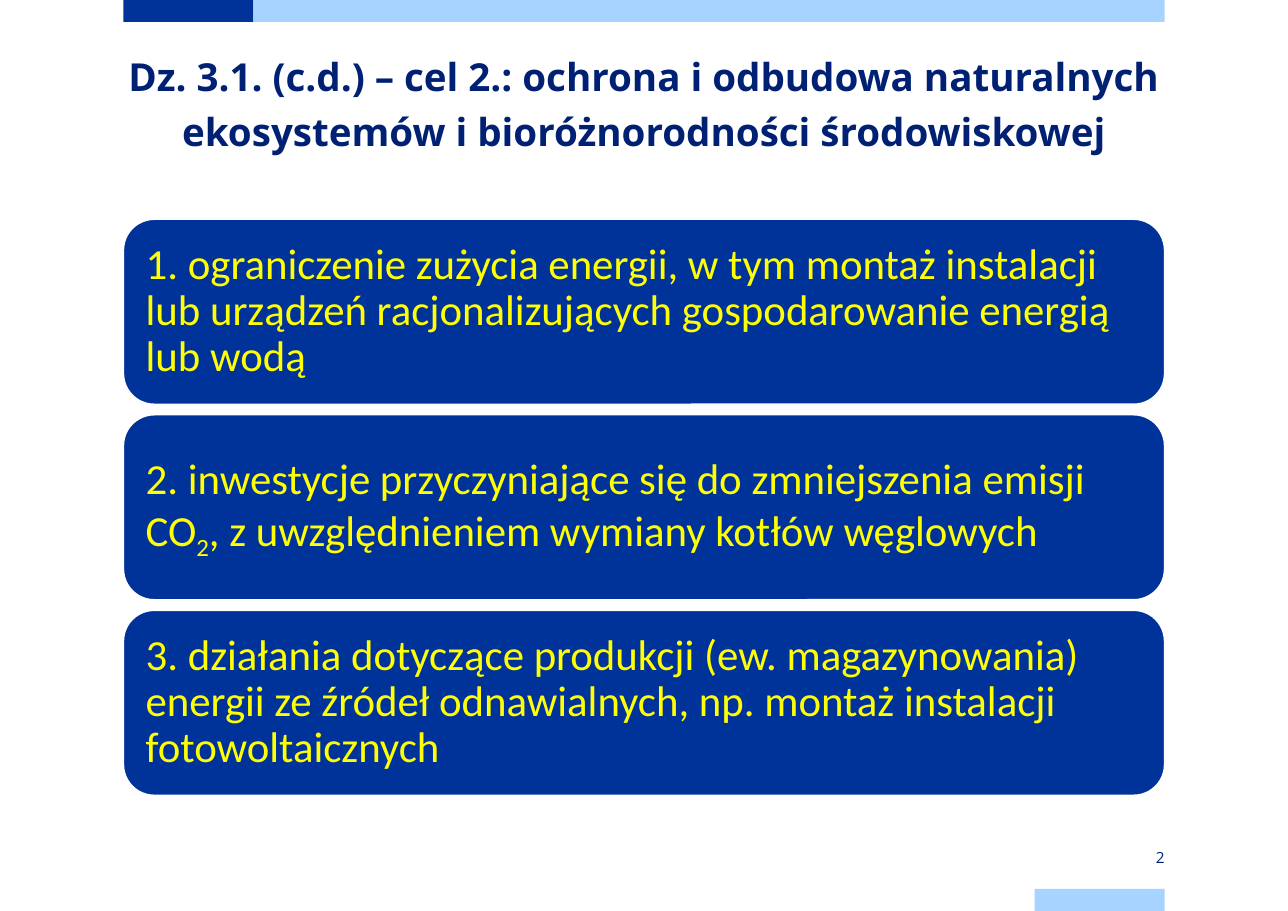
"""Build the slide on goal 2: protecting and restoring natural ecosystems."""
from dataclasses import dataclass

from pptx import Presentation
from pptx.dml.color import RGBColor
from pptx.enum.shapes import MSO_SHAPE as Shape
from pptx.enum.text import MSO_ANCHOR as Anchor, PP_ALIGN as Align
from pptx.util import Inches, Pt

TITLE = ("Dz. 3.1. (c.d.) – cel 2.: ochrona i odbudowa naturalnych "
         "ekosystemów i bioróżnorodności środowiskowej")
ACTIONS = [
    [("1. ograniczenie zużycia energii, w tym montaż instalacji lub urządzeń "
      "racjonalizujących gospodarowanie energią lub wodą", False)],
    [("2. inwestycje przyczyniające się do zmniejszenia emisji CO", False),
     ("2", True),
     (", z uwzględnieniem wymiany kotłów węglowych", False)],
    [("3. działania dotyczące produkcji (ew. magazynowania) energii ze źródeł "
      "odnawialnych, np. montaż instalacji fotowoltaicznych", False)],
]
PAGE_NUMBER = "2"


@dataclass(frozen=True)
class Theme:
    navy: str = "002073"
    blue: str = "003399"
    sky: str = "A6D3FF"
    yellow: str = "FFFF00"
    white: str = "FFFFFF"
    heading_font: str = "Open Sans"
    body_font: str = "Calibri"
    title_size: float = 25.2
    action_size: float = 28
    number_size: float = 10


THEME = Theme()
WIDTH, HEIGHT = 11.69, 8.27
LEFT, CONTENT_WIDTH = 1.12, 9.45
RIGHT = LEFT + CONTENT_WIDTH
BAND_HEIGHT, ACCENT_WIDTH = 0.2, 1.18
CARD_TOP, CARD_HEIGHT, CARD_PITCH = 1.99, 1.68, 1.775


def box(left, top, width, height):
    return [Inches(value) for value in (left, top, width, height)]


def add_block(slide, kind, bounds, color):
    block = slide.shapes.add_shape(kind, *box(*bounds))
    block.shadow.inherit = False
    block.fill.solid()
    block.fill.fore_color.rgb = RGBColor.from_string(color)
    block.line.fill.background()
    return block


def set_frame(frame, anchor, insets):
    frame.word_wrap = True
    frame.vertical_anchor = anchor
    (frame.margin_left, frame.margin_top,
     frame.margin_right, frame.margin_bottom) = box(*insets)


def add_run(paragraph, text, font, size, color, bold=False, subscript=False):
    run = paragraph.add_run()
    run.text = text
    run.font.name = font
    run.font.size = Pt(size)
    run.font.bold = bold
    run.font.color.rgb = RGBColor.from_string(color)
    if subscript:
        run._r.get_or_add_rPr().set("baseline", "-25000")


def add_bands(slide):
    accent_left = RIGHT - ACCENT_WIDTH
    bands = [
        (LEFT, 0, ACCENT_WIDTH, THEME.blue),
        (LEFT + ACCENT_WIDTH, 0, CONTENT_WIDTH - ACCENT_WIDTH, THEME.sky),
        (accent_left, HEIGHT - BAND_HEIGHT, ACCENT_WIDTH, THEME.sky),
    ]
    for left, top, width, color in bands:
        add_block(slide, Shape.RECTANGLE, (left, top, width, BAND_HEIGHT), color)


def add_title(slide):
    title = slide.shapes.title
    title.left, title.top, title.width, title.height = box(
        LEFT, 0.35, CONTENT_WIDTH, 1.18)
    set_frame(title.text_frame, Anchor.TOP, (0, 0.05, 0, 0))
    heading = title.text_frame.paragraphs[0]
    heading.alignment = Align.CENTER
    heading.line_spacing = Pt(36)
    add_run(heading, TITLE, THEME.heading_font, THEME.title_size, THEME.navy, bold=True)


def add_actions(slide):
    for index, pieces in enumerate(ACTIONS):
        top = CARD_TOP + index * CARD_PITCH
        card = add_block(slide, Shape.ROUNDED_RECTANGLE,
                         (LEFT, top, CONTENT_WIDTH, CARD_HEIGHT), THEME.blue)
        card.line.color.rgb = RGBColor.from_string(THEME.white)
        card.line.width = Pt(1)
        set_frame(card.text_frame, Anchor.MIDDLE, (0.12, 0.12, 0.12, 0.12))
        action = card.text_frame.paragraphs[0]
        action.alignment = Align.LEFT
        action.line_spacing = 0.9
        for text, subscript in pieces:
            add_run(action, text, THEME.body_font, THEME.action_size,
                    THEME.yellow, subscript=subscript)


def add_page_number(slide):
    number = slide.shapes.add_textbox(
        *box(RIGHT - ACCENT_WIDTH, 7.68, ACCENT_WIDTH, 0.2))
    set_frame(number.text_frame, Anchor.MIDDLE, (0, 0, 0, 0))
    label = number.text_frame.paragraphs[0]
    label.alignment = Align.RIGHT
    add_run(label, PAGE_NUMBER, THEME.heading_font, THEME.number_size, THEME.navy)


def main():
    deck = Presentation()
    deck.slide_width, deck.slide_height = Inches(WIDTH), Inches(HEIGHT)
    slide = deck.slides.add_slide(deck.slide_layouts[5])
    add_bands(slide)
    add_title(slide)
    add_actions(slide)
    add_page_number(slide)
    deck.save("out.pptx")


if __name__ == "__main__":
    main()
